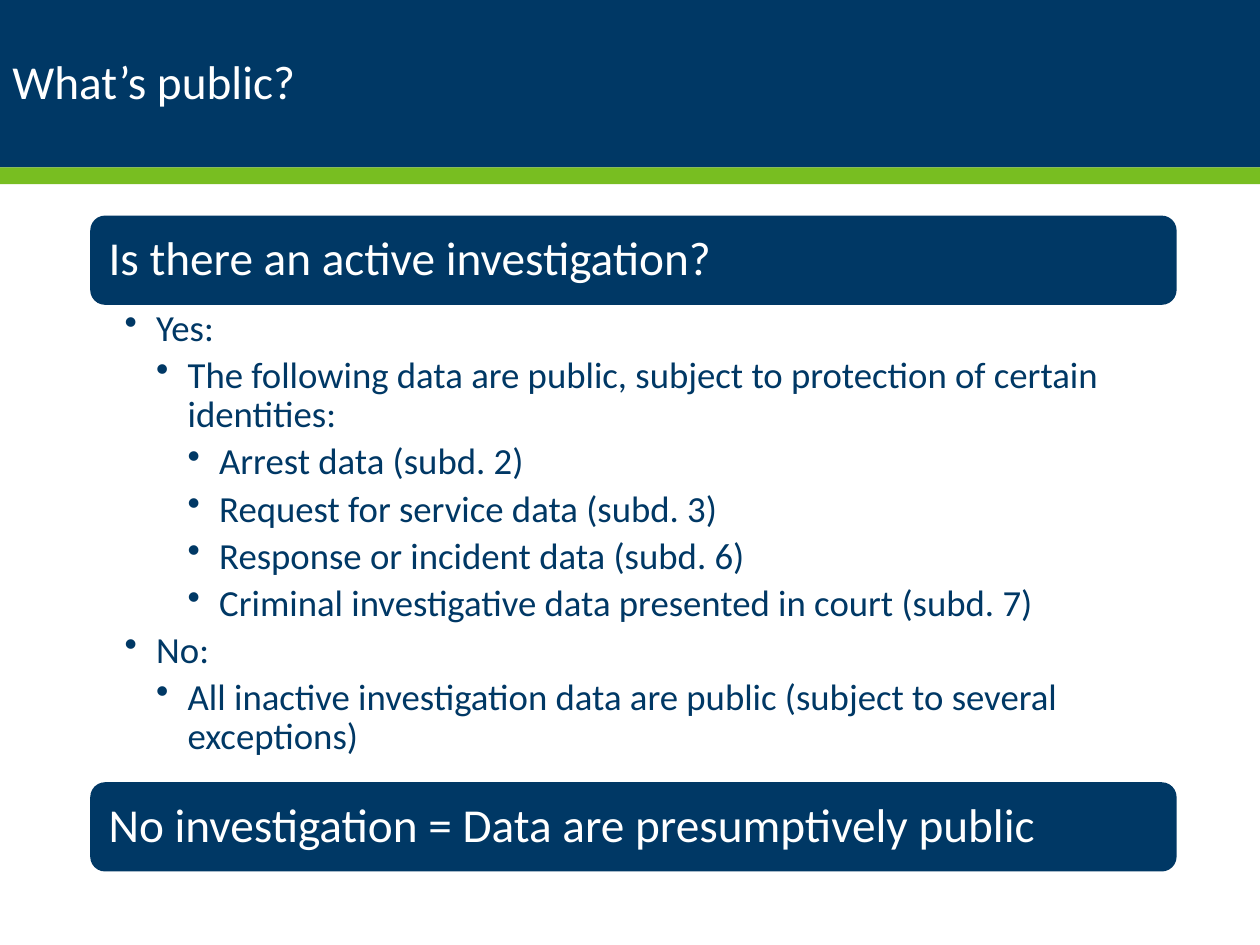
import pptx
import pptx.util
import pptx.dml.color
import pptx.enum.shapes
import pptx.enum.text
import pptx.oxml.ns
import lxml.etree

Pt = pptx.util.Pt
SHAPE = pptx.enum.shapes.MSO_SHAPE
ANCHOR = pptx.enum.text.MSO_ANCHOR
NAVY, GREEN, WHITE = "003865", "78BE21", "FFFFFF"
ANSWERS = [
    (1, "Yes:"),
    (2, "The following data are public, subject to protection of certain identities:"),
    (3, "Arrest data (subd. 2)"),
    (3, "Request for service data (subd. 3)"),
    (3, "Response or incident data (subd. 6)"),
    (3, "Criminal investigative data presented in court (subd. 7)"),
    (1, "No:"),
    (2, "All inactive investigation data are public (subject to several exceptions)"),
]


def rgb(color):
    return pptx.dml.color.RGBColor.from_string(color)


def add_block(s, kind, x, y, w, h, color):
    sp = s.shapes.add_shape(kind, Pt(x), Pt(y), Pt(w), Pt(h))
    sp.shadow.inherit = False
    sp.fill.solid()
    sp.fill.fore_color.rgb = rgb(color)
    sp.line.fill.background()
    return sp


def set_frame(tf, anchor, left, top, right, bottom):
    tf.word_wrap = True
    tf.vertical_anchor = anchor
    tf.margin_left, tf.margin_top = Pt(left), Pt(top)
    tf.margin_right, tf.margin_bottom = Pt(right), Pt(bottom)


def write(p, text, size, color):
    p.alignment = pptx.enum.text.PP_ALIGN.LEFT
    p.line_spacing = 0.9
    r = p.add_run()
    r.text = text
    r.font.size = Pt(size)
    r.font.name = "Calibri"
    r.font.color.rgb = rgb(color)


def add_bullet(p, level):
    p.level = level
    pPr = p._p.get_or_add_pPr()
    pPr.set("marL", str(Pt(18 * level)))
    pPr.set("indent", str(Pt(-18)))
    bullet = lxml.etree.SubElement(pPr, pptx.oxml.ns.qn("a:buChar"))
    bullet.set("char", "•")


def add_header(s, x, y, w, h, title):
    bar = 9.6
    add_block(s, SHAPE.RECTANGLE, x, y, w, h - bar, NAVY)
    add_block(s, SHAPE.RECTANGLE, x, y + h - bar, w, bar, GREEN)
    sp = s.shapes.add_textbox(Pt(x), Pt(y + 12), Pt(620.6), Pt(72))
    set_frame(sp.text_frame, ANCHOR.MIDDLE, 7.2, 3.6, 7.2, 3.6)
    write(sp.text_frame.paragraphs[0], title, 27, WHITE)


def add_banner(s, x, y, w, h, text):
    sp = add_block(s, SHAPE.ROUNDED_RECTANGLE, x, y, w, h, NAVY)
    set_frame(sp.text_frame, ANCHOR.MIDDLE, 8, 8, 8, 8)
    write(sp.text_frame.paragraphs[0], text, 27, WHITE)


def add_answers(s, x, y, w, h, items):
    sp = s.shapes.add_textbox(Pt(x), Pt(y), Pt(w), Pt(h))
    tf = sp.text_frame
    set_frame(tf, ANCHOR.TOP, 19.7, 2.7, 15.1, 2.7)
    for i, (level, text) in enumerate(items):
        p = tf.add_paragraph() if i else tf.paragraphs[0]
        write(p, text, 21, NAVY)
        p.space_after = Pt(4.2)
        add_bullet(p, level)


def add_question(s, x, y, w, h):
    banner = 51
    add_banner(s, x, y, w, banner, "Is there an active investigation?")
    add_answers(s, x, y + banner, w, h - 2 * banner, ANSWERS)
    add_banner(s, x, y + h - banner, w, banner,
               "No investigation = Data are presumptively public")


def main():
    prs = pptx.Presentation()
    prs.slide_width, prs.slide_height = Pt(720), Pt(540)
    s = prs.slides.add_slide(prs.slide_layouts[6])
    add_header(s, 0, 0, 720, 105.2, "What’s public?")
    add_question(s, 51.6, 123.2, 620.8, 374.8)
    prs.save("out.pptx")


if __name__ == "__main__":
    main()
